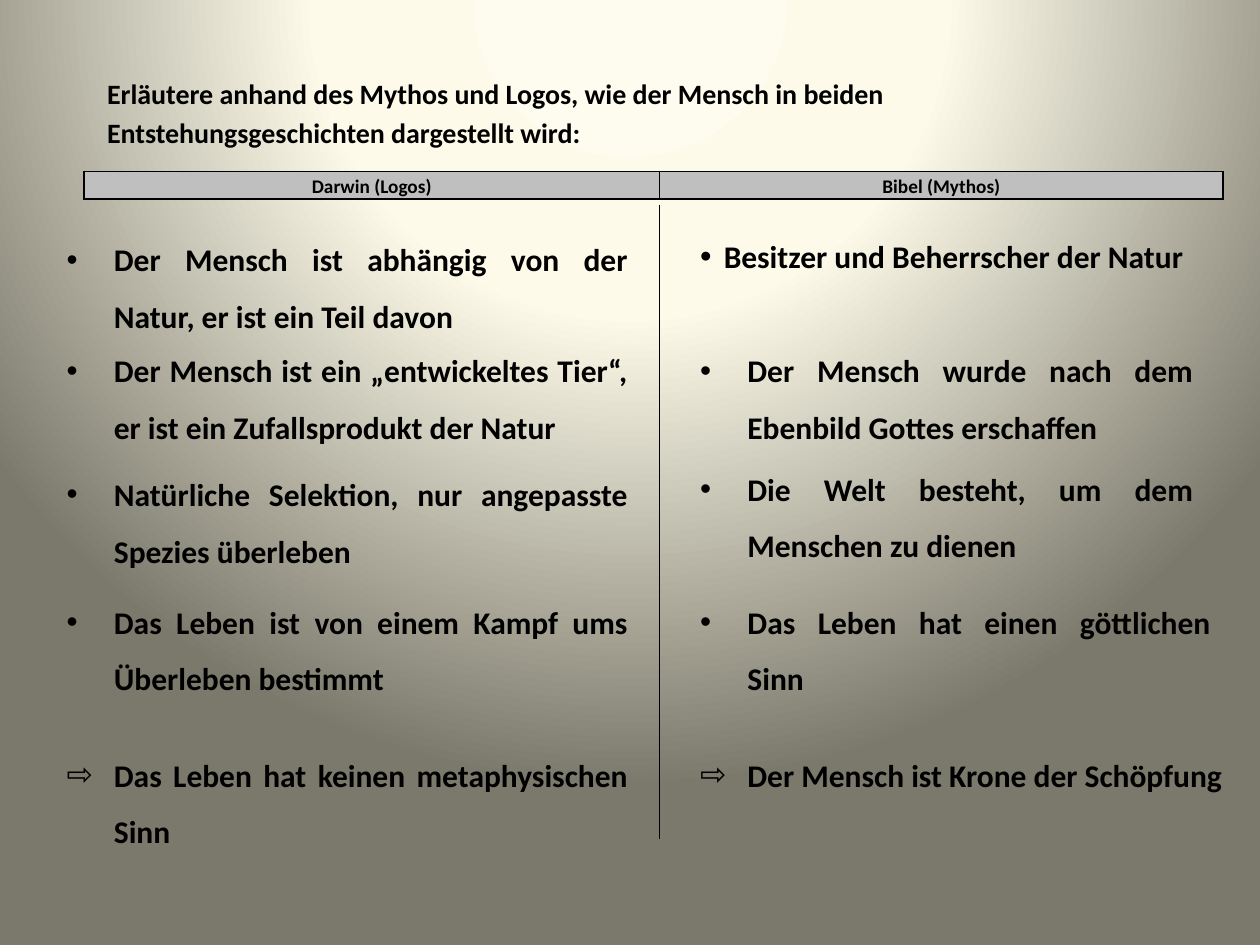
from pptx import Presentation
from pptx.dml.color import RGBColor
from pptx.enum.shapes import MSO_CONNECTOR as CONN
from pptx.enum.text import MSO_ANCHOR as ANCHOR, MSO_AUTO_SIZE as FIT, PP_ALIGN as ALIGN
from pptx.oxml import parse_xml
from pptx.oxml.ns import nsdecls, qn
from pptx.util import Pt

NS = nsdecls("a")


def color(value):
    return RGBColor.from_string(value)


def add_run(p, text, size):
    r = p.add_run()
    r.text = text
    r.font.name = "Calibri"
    r.font.size = Pt(size)
    r.font.bold = True
    r.font.color.rgb = color("000000")


prs = Presentation()
prs.slide_width, prs.slide_height = Pt(720), Pt(540)
s = prs.slides.add_slide(prs.slide_layouts[5])

s.background.fill.solid()
stops = "".join(
    f'<a:gs pos="{pos * 1000}"><a:srgbClr val="{value}"/></a:gs>'
    for pos, value in [(0, "FEFCEE"), (40, "FDFAEA"), (100, "7B796B")]
)
bg = s.element.find(".//" + qn("p:bgPr"))
bg.replace(bg[0], parse_xml(
    f'<a:gradFill {NS} rotWithShape="1"><a:gsLst>{stops}</a:gsLst><a:path path="circle">'
    '<a:fillToRect l="50000" t="-80000" r="50000" b="180000"/></a:path></a:gradFill>'
))

title = s.shapes.title
title.left, title.top, title.width, title.height = Pt(54), Pt(37.5), Pt(578), Pt(52)
tf = title.text_frame
tf.word_wrap = True
tf.auto_size = FIT.NONE
tf.vertical_anchor = ANCHOR.TOP
p = tf.paragraphs[0]
p.alignment = ALIGN.LEFT
p.line_spacing = 1.15
add_run(p, "Erläutere anhand des Mythos und Logos, wie der Mensch in beiden "
           "Entstehungsgeschichten dargestellt wird:", 16)

table = s.shapes.add_table(1, 2, Pt(48), Pt(98), Pt(651), Pt(15)).table
table.first_row = table.horz_banding = False
table.rows[0].height = Pt(15)
for i, (text, width) in enumerate([("Darwin (Logos)", 329), ("Bibel (Mythos)", 322)]):
    table.columns[i].width = Pt(width)
    cell = table.cell(0, i)
    cell.margin_left = cell.margin_right = Pt(5)
    cell.margin_top = cell.margin_bottom = 0
    cell.fill.solid()
    cell.fill.fore_color.rgb = color("BFBFBF")
    p = cell.text_frame.paragraphs[0]
    p.alignment = ALIGN.CENTER
    p.line_spacing = 1.15
    add_run(p, text, 11)
    tcPr = cell._tc.get_or_add_tcPr()
    for k, side in enumerate("LRTB"):
        tcPr.insert(k, parse_xml(
            f'<a:ln{side} {NS} w="{Pt(1)}"><a:solidFill><a:srgbClr val="000000"/>'
            f'</a:solidFill></a:ln{side}>'
        ))

LEFT, RIGHT = 31, 393
points = [
    (LEFT, 123, 335, "•", "Der Mensch ist abhängig von der Natur, er ist ein Teil davon"),
    (LEFT, 186.5, 335, "•", "Der Mensch ist ein „entwickeltes Tier“, er ist ein Zufallsprodukt der Natur"),
    (LEFT, 257, 335, "•", "Natürliche Selektion, nur angepasste Spezies überleben"),
    (LEFT, 330, 335, "•", "Das Leben ist von einem Kampf ums Überleben bestimmt"),
    (LEFT, 417.5, 335, "⇨", "Das Leben hat keinen metaphysischen Sinn"),
    (RIGHT, 132, 306, "•", "Besitzer und Beherrscher der Natur"),
    (RIGHT, 186.5, 296, "•", "Der Mensch wurde nach dem Ebenbild Gottes erschaffen"),
    (RIGHT, 254, 296, "•", "Die Welt besteht, um dem Menschen zu dienen"),
    (RIGHT, 330, 306, "•", "Das Leben hat einen göttlichen Sinn"),
    (RIGHT, 417.5, 315.5, "⇨", "Der Mensch ist Krone der Schöpfung"),
]
for left, top, width, bullet, text in points:
    compact = text.startswith("Besitzer")
    one_line = text.endswith("Schöpfung")
    height = 51 if compact else 40.5 if one_line else 73
    tf = s.shapes.add_textbox(Pt(left), Pt(top), Pt(width), Pt(height)).text_frame
    tf.word_wrap = True
    tf.auto_size = FIT.NONE if compact else FIT.SHAPE_TO_FIT_TEXT
    p = tf.paragraphs[0]
    p.alignment = ALIGN.LEFT if compact else ALIGN.JUSTIFY
    p.line_spacing = 1.0 if compact else 1.5
    add_run(p, text, 18)
    indent = Pt(13.5 if compact else 27)
    pPr = p._p.get_or_add_pPr()
    pPr.set("marL", str(indent))
    pPr.set("indent", str(-indent))
    if compact:
        pPr.append(parse_xml(f'<a:buSzPct {NS} val="104000"/>'))
    pPr.append(parse_xml(f'<a:buFont {NS} typeface="Arial"/>'))
    pPr.append(parse_xml(f'<a:buChar {NS} char="{bullet}"/>'))

divider = s.shapes.add_connector(CONN.STRAIGHT, Pt(377), Pt(117), Pt(377), Pt(479.5))
divider.line.color.rgb = color("000000")
divider.line.width = Pt(0.75)
divider._element.spPr.append(parse_xml(f"<a:effectLst {NS}/>"))

prs.save("out.pptx")
